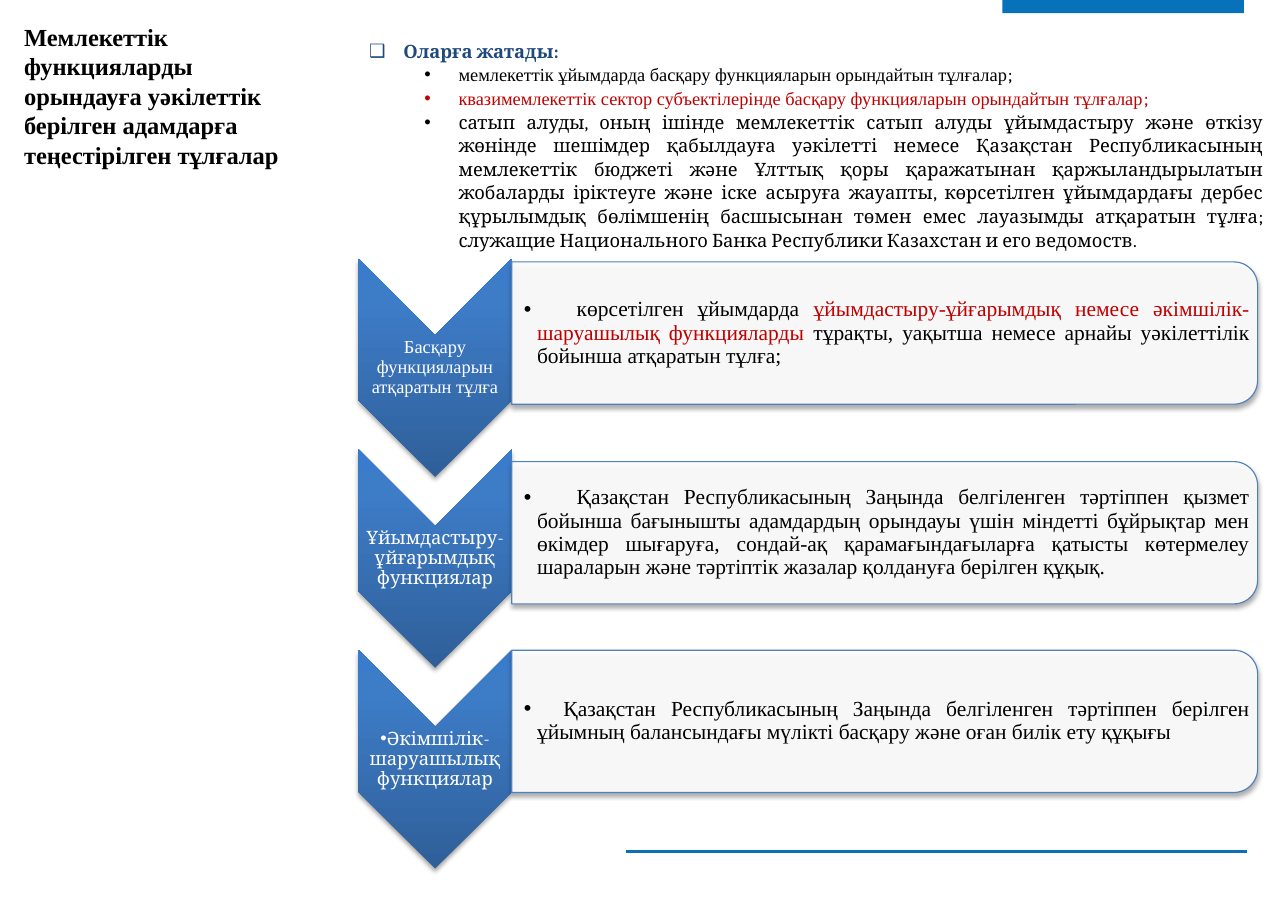
from pptx import Presentation
from pptx.dml.color import RGBColor
from pptx.enum.shapes import MSO_CONNECTOR, MSO_SHAPE
from pptx.enum.text import MSO_ANCHOR, MSO_AUTO_SIZE, PP_ALIGN
from pptx.oxml import parse_xml
from pptx.oxml.ns import nsdecls, qn
from pptx.util import Inches, Pt
from lxml.etree import SubElement

WIDTH, HEIGHT = 11.68, 8.26
SERIF, TIMES = "Cambria", "Times New Roman"
BLACK, WHITE, RED, NAVY = "000000", "FFFFFF", "C00000", "1F497D"
BLUE, BAR_BLUE, OUTLINE = "0971B4", "0772BA", "4F81BD"
GRADIENT = [(0, "2F5F99"), (80, "3D7CC7"), (100, "3A7CCB")]


def rgb(value):
    return RGBColor.from_string(value)


def cols(n):
    """One column is a hundredth of the slide's width."""
    return Inches(WIDTH * n / 100)


def rows(n):
    """One row is a hundredth of the slide's height."""
    return Inches(HEIGHT * n / 100)


def place(x, y, w, h):
    return cols(x), rows(y), cols(w), rows(h)


# Text
def add_bullet(p, char, margin, hang, tab=None):
    pPr = p._p.get_or_add_pPr()
    pPr.set("marL", str(Inches(margin)))
    pPr.set("indent", str(Inches(-hang)))
    SubElement(pPr, qn("a:buFont"), typeface="Arial")
    SubElement(pPr, qn("a:buChar"), char=char)
    if tab:
        stops = SubElement(pPr, qn("a:tabLst"))
        SubElement(stops, qn("a:tab"), pos=str(Inches(tab)), algn="l")


def add_runs(p, runs, size, bold=False):
    for text, font, color in runs:
        r = p.add_run()
        r.text = text
        for name, value in {"name": font, "size": Pt(size), "bold": bold}.items():
            setattr(r.font, name, value)
        r.font.color.rgb = rgb(color)


def add_text(s, box, insets=None, **frame):
    tf = s.shapes.add_textbox(*place(*box)).text_frame
    tf.word_wrap = True
    for name, value in frame.items():
        setattr(tf, name, value)
    for side, inset in zip(("left", "top", "right", "bottom"), insets or ()):
        setattr(tf, f"margin_{side}", Inches(inset))
    return tf


# Shapes
def add_turned(s, preset, box):
    """Shape with a shadow, turned a quarter so that it covers the box."""
    x, y, w, h = place(*box)
    sp = s.shapes.add_shape(preset, x + (w - h) // 2, y + (h - w) // 2, h, w)
    sp.rotation = 90
    sp.shadow.inherit = False
    sp.fill.solid()
    sp.fill.fore_color.rgb = rgb(WHITE)
    sp._element.spPr.find(qn("a:effectLst")).append(parse_xml(
        f'<a:outerShdw {nsdecls("a")} blurRad="{Pt(3.1)}" dist="{Pt(1.8)}" '
        f'dir="5400000" rotWithShape="0"><a:srgbClr val="{BLACK}">'
        '<a:alpha val="35000"/></a:srgbClr></a:outerShdw>'))
    return sp


def add_chevron(s, box):
    sp = add_turned(s, MSO_SHAPE.CHEVRON, box)
    sp.line.fill.background()
    stops = "".join(f'<a:gs pos="{pos * 1000}"><a:srgbClr val="{color}"/></a:gs>'
                    for pos, color in GRADIENT)
    spPr = sp._element.spPr
    spPr.replace(spPr.find(qn("a:solidFill")), parse_xml(
        f'<a:gradFill {nsdecls("a")} rotWithShape="0"><a:gsLst>{stops}</a:gsLst>'
        '<a:lin ang="16200000" scaled="0"/></a:gradFill>'))


def add_panel(s, box):
    sp = add_turned(s, MSO_SHAPE.ROUND_2_SAME_RECTANGLE, box)
    sp.line.color.rgb = rgb(OUTLINE)
    sp.line.width = Pt(0.75)
    color = sp._element.spPr.find(qn("a:solidFill")).find(qn("a:srgbClr"))
    SubElement(color, qn("a:alpha"), val="90000")


# Regions
def add_decor(s):
    bar = s.shapes.add_shape(MSO_SHAPE.RECTANGLE, *place(77.83, 0, 18.75, 1.45))
    bar.shadow.inherit = False
    bar.fill.solid()
    bar.fill.fore_color.rgb = rgb(BAR_BLUE)
    bar.line.fill.background()
    y = rows(93.46)
    rule = s.shapes.add_connector(MSO_CONNECTOR.STRAIGHT, cols(48.63), y, cols(96.83), y)
    rule.line.color.rgb = rgb(BLUE)
    rule.line.width = Pt(1.75)
    SubElement(rule._element.spPr, qn("a:effectLst"))


def add_title(s, box, text):
    tf = add_text(s, box, auto_size=MSO_AUTO_SIZE.SHAPE_TO_FIT_TEXT)
    add_runs(tf.paragraphs[0], [(text, TIMES, BLACK)], 16, bold=True)


def add_list(s, box, heading, items):
    tf = add_text(s, box, auto_size=MSO_AUTO_SIZE.SHAPE_TO_FIT_TEXT)
    for i, runs in enumerate([[(heading, SERIF, NAVY)]] + items):
        p = tf.add_paragraph() if i else tf.paragraphs[0]
        p.alignment, p.line_spacing, p.level = PP_ALIGN.JUSTIFY, 1.07, min(i, 1)
        add_bullet(p, "•" if i else "❑", 0.81 if i else 0.31, 0.31)
        add_runs(p, runs, 12, bold=not i)


def add_step(s, box, panel_drop, label, font, bulleted, tab, runs):
    x, y, w, h = box
    chevron_w, label_h, panel_h, inset = 11.9, 7.14, 15.62, 0.01
    add_chevron(s, (x, y, chevron_w, h))
    tf = add_text(s, (x, y + (h - label_h) / 2, chevron_w, label_h), [inset] * 4,
                  vertical_anchor=MSO_ANCHOR.MIDDLE)
    p = tf.paragraphs[0]
    p.alignment, p.line_spacing = PP_ALIGN.CENTER, 0.9
    if bulleted:
        add_bullet(p, "•", 0, 0)
    add_runs(p, [(label, font, WHITE)], 12)

    panel = (x + chevron_w, y + panel_drop, w - chevron_w, panel_h)
    add_panel(s, panel)
    tf = add_text(s, (*panel[:2], panel[2] - 0.5, panel_h), [0.11] + [inset] * 3,
                  vertical_anchor=MSO_ANCHOR.MIDDLE)
    p = tf.paragraphs[0]
    p.alignment, p.line_spacing, p.level = PP_ALIGN.JUSTIFY, 0.9, 1
    add_bullet(p, "•", 0.12, 0.12, tab)
    first, *rest = runs
    add_runs(p, [("\t" + first[0], *first[1:])] + rest, 14)


TITLE = "Мемлекеттік функцияларды орындауға уәкілеттік берілген адамдарға теңестірілген тұлғалар"
ITEMS = [
    [("мемлекеттік ұйымдарда басқару функцияларын орындайтын тұлғалар", TIMES, BLACK),
     (";", SERIF, BLACK)],
    [("квазимемлекеттік сектор субъектілерінде басқару функцияларын орындайтын тұлғалар",
      TIMES, RED), (";", SERIF, RED)],
    [("сатып алуды, оның ішінде мемлекеттік сатып алуды ұйымдастыру және өткізу жөнінде "
      "шешімдер қабылдауға уәкілетті немесе Қазақстан Республикасының мемлекеттік бюджеті "
      "және Ұлттық қоры қаражатынан қаржыландырылатын жобаларды іріктеуге және іске асыруға "
      "жауапты, көрсетілген ұйымдардағы дербес құрылымдық бөлімшенің басшысынан төмен емес "
      "лауазымды атқаратын тұлға; служащие Национального Банка Республики Казахстан и его "
      "ведомоств.", SERIF, BLACK)],
]
# Top row, panel drop, label, label font, label bullet, first-line tab, panel runs
STEPS = [
    (28.39, 0.36, "Басқару функцияларын атқаратын тұлға", TIMES, False, 0.48,
     [("көрсетілген ұйымдарда ", TIMES, BLACK),
      ("ұйымдастыру-ұйғарымдық немесе әкімшілік-шаруашылық функцияларды ", TIMES, RED),
      ("тұрақты, уақытша немесе арнайы уәкілеттілік бойынша атқаратын тұлға;", TIMES, BLACK)]),
    (49.33, 1.34, "Ұйымдастыру-ұйғарымдық функциялар", SERIF, False, 0.48,
     [("Қазақстан Республикасының Заңында белгіленген тәртіппен қызмет бойынша бағынышты "
       "адамдардың орындауы үшін міндетті бұйрықтар мен өкімдер шығаруға, сондай-ақ "
       "қарамағындағыларға қатысты көтермелеу шараларын және тәртіптік жазалар қолдануға "
       "берілген құқық.", TIMES, BLACK)]),
    (71.37, 0, "Әкімшілік-шаруашылық функциялар", SERIF, True, 0.36,
     [("Қазақстан Республикасының Заңында белгіленген тәртіппен берілген ұйымның "
       "балансындағы мүлікті басқару және оған билік ету құқығы", TIMES, BLACK)]),
]


def main():
    prs = Presentation()
    prs.slide_width, prs.slide_height = Inches(WIDTH), Inches(HEIGHT)
    s = prs.slides.add_slide(prs.slide_layouts[6])
    add_decor(s)
    add_title(s, (1.03, 1.82, 23.03, 17.55), TITLE)
    add_list(s, (27.83, 3.63, 71.15, 24.82), "Оларға жатады:", ITEMS)
    for top, *step in STEPS:
        add_step(s, (27.83, top, 69.81, 23.97), *step)
    prs.save("out.pptx")


if __name__ == "__main__":
    main()
